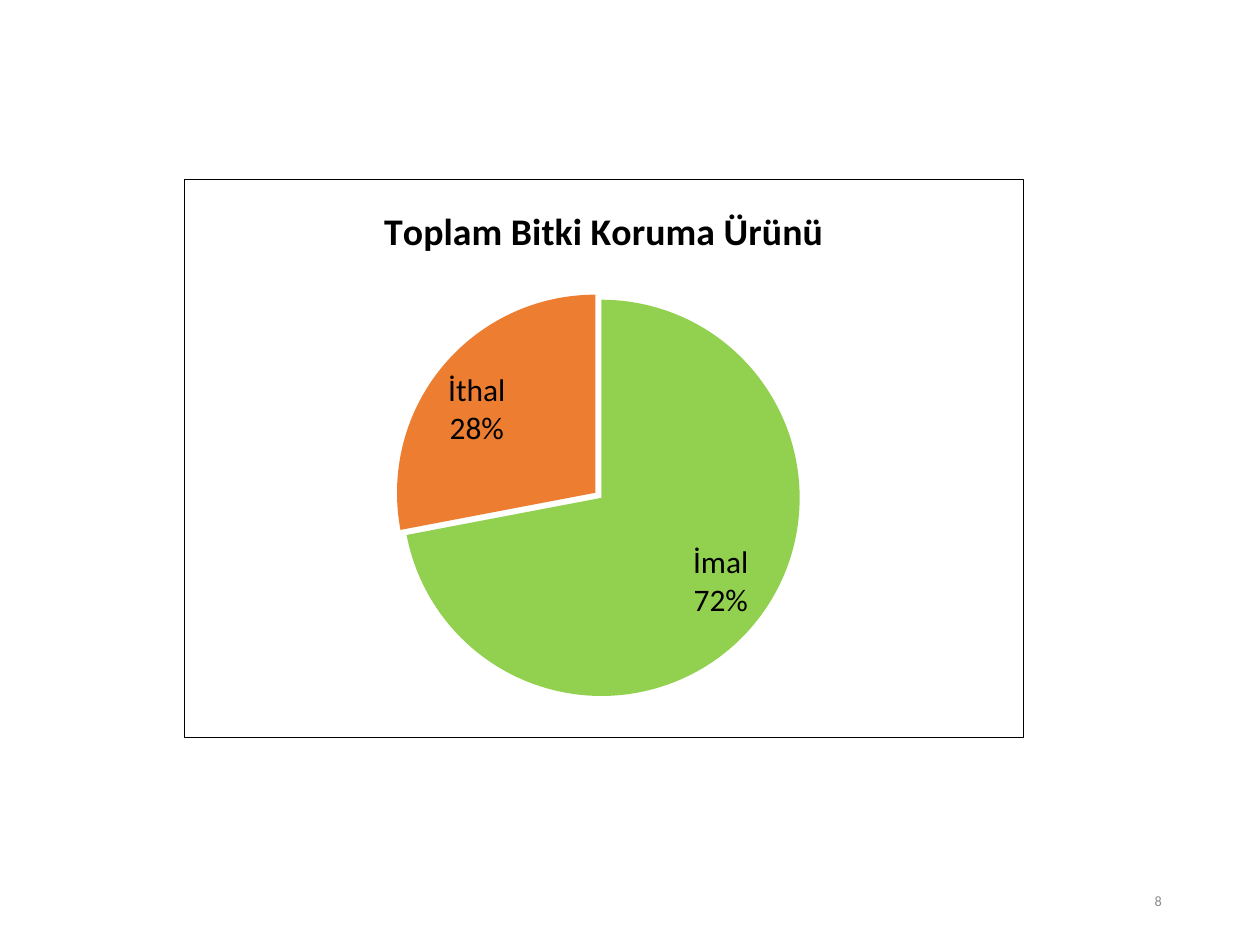
"""Build a slide with an exploded pie chart of plant protection products."""
from typing import NamedTuple

from lxml import etree
from pptx import Presentation
from pptx.chart.data import CategoryChartData
from pptx.dml.color import RGBColor
from pptx.enum.chart import XL_CHART_TYPE, XL_LABEL_POSITION
from pptx.enum.text import MSO_ANCHOR, PP_ALIGN
from pptx.oxml import parse_xml
from pptx.oxml.ns import nsdecls, qn
from pptx.util import Inches, Pt

PIE = XL_CHART_TYPE.PIE
INSIDE_END = XL_LABEL_POSITION.INSIDE_END
MIDDLE = MSO_ANCHOR.MIDDLE
RIGHT = PP_ALIGN.RIGHT

SLIDE_WIDTH, SLIDE_HEIGHT = Inches(10), Inches(7.5)
FONT = "Calibri"
COLORS = {
    "text": "000000",
    "number": "8C8C8C",
    "green": "92D050",
    "orange": "ED7D31",
}


class Box(NamedTuple):
    """Position and size as shares of a surrounding area."""

    left: float
    top: float
    width: float
    height: float

    def on_slide(self) -> tuple[int, int, int, int]:
        """Return the box in slide units."""
        return (
            int(self.left * SLIDE_WIDTH),
            int(self.top * SLIDE_HEIGHT),
            int(self.width * SLIDE_WIDTH),
            int(self.height * SLIDE_HEIGHT),
        )


class Slice(NamedTuple):
    """One slice of the pie."""

    name: str
    percent: int
    color: str
    explosion: int


CHART_BOX = Box(0.146, 0.189, 0.667, 0.592)
PLOT_BOX = Box(0.075, 0.207, 0.829, 0.71)
NUMBER_BOX = Box(0.707, 0.927, 0.225, 0.053)
SLICES = [
    Slice("İmal", 72, "green", 4),
    Slice("İthal", 28, "orange", 0),
]


def set_font(font, size: float, color: str, bold: bool = False) -> None:
    """Apply the slide's typeface with the given look."""
    font.name = FONT
    font.size = Pt(size)
    font.bold = bold
    font.color.rgb = RGBColor.from_string(COLORS[color])


def place_plot(chart, box: Box) -> None:
    """Fix the inner plot area inside the chart."""
    plot_area = chart.plots[0]._element.getparent()
    for old_layout in plot_area.findall(qn("c:layout")):
        plot_area.remove(old_layout)
    names = ("x", "y", "w", "h")
    modes = "".join(f'<c:{name}Mode val="edge"/>' for name in names[:2])
    sizes = "".join(f'<c:{name} val="{share}"/>' for name, share in zip(names, box))
    plot_area.insert(0, parse_xml(
        f'<c:layout {nsdecls("c")}><c:manualLayout><c:layoutTarget val="inner"/>'
        f"{modes}{sizes}</c:manualLayout></c:layout>"
    ))


def frame_chart(chart, color: str, width: float) -> None:
    """Draw a border around the whole chart."""
    border = parse_xml(
        f'<c:spPr {nsdecls("c", "a")}><a:noFill/><a:ln w="{Pt(width)}"><a:solidFill>'
        f'<a:srgbClr val="{COLORS[color]}"/></a:solidFill></a:ln></c:spPr>'
    )
    chart._chartSpace.find(qn("c:chart")).addnext(border)


def format_slice(series, index: int, pie_slice: Slice) -> None:
    """Colour a slice and pull it out from the centre."""
    point = series.points[index]
    point.format.fill.solid()
    point.format.fill.fore_color.rgb = RGBColor.from_string(COLORS[pie_slice.color])
    point.format.line.fill.background()
    if pie_slice.explosion:
        explosion = etree.Element(qn("c:explosion"), val=str(pie_slice.explosion))
        series._element.findall(qn("c:dPt"))[index].find(qn("c:spPr")).addprevious(explosion)


def add_pie(slide, title: str) -> None:
    """Add the titled pie chart with its labels."""
    data = CategoryChartData()
    data.categories = [pie_slice.name for pie_slice in SLICES]
    data.add_series("Series 1", [pie_slice.percent for pie_slice in SLICES])
    chart = slide.shapes.add_chart(PIE, *CHART_BOX.on_slide(), data).chart
    set_font(chart.font, 18, "text")
    chart.has_legend = False
    chart.has_title = True
    chart.chart_title.include_in_layout = False
    chart.chart_title.text_frame.text = title
    set_font(chart.chart_title.text_frame.paragraphs[0].font, 21.6, "text", bold=True)
    place_plot(chart, PLOT_BOX)
    frame_chart(chart, "text", 0.75)

    plot = chart.plots[0]
    plot.vary_by_categories = True
    for index, pie_slice in enumerate(SLICES):
        format_slice(plot.series[0], index, pie_slice)
    labels = plot.series[0].data_labels
    labels.show_category_name = True
    labels.show_percentage = True
    labels.show_value = False
    labels.number_format = "0%"
    labels.number_format_is_linked = False
    labels.position = INSIDE_END
    set_font(labels.font, 18, "text")
    separator = etree.Element(qn("c:separator"))
    separator.text = "\n"
    labels._element.find(qn("c:showBubbleSize")).addnext(separator)


def add_slide_number(slide, number: str) -> None:
    """Add the slide number at the lower right."""
    frame = slide.shapes.add_textbox(*NUMBER_BOX.on_slide()).text_frame
    frame.word_wrap = True
    frame.vertical_anchor = MIDDLE
    frame.text = number
    paragraph = frame.paragraphs[0]
    paragraph.alignment = RIGHT
    set_font(paragraph.font, 8.2, "number")


def main() -> None:
    """Create and save the presentation."""
    presentation = Presentation()
    presentation.slide_width, presentation.slide_height = SLIDE_WIDTH, SLIDE_HEIGHT
    slide = presentation.slides.add_slide(presentation.slide_layouts[6])
    add_slide_number(slide, "8")
    add_pie(slide, "Toplam Bitki Koruma Ürünü")
    presentation.save("out.pptx")


if __name__ == "__main__":
    main()
